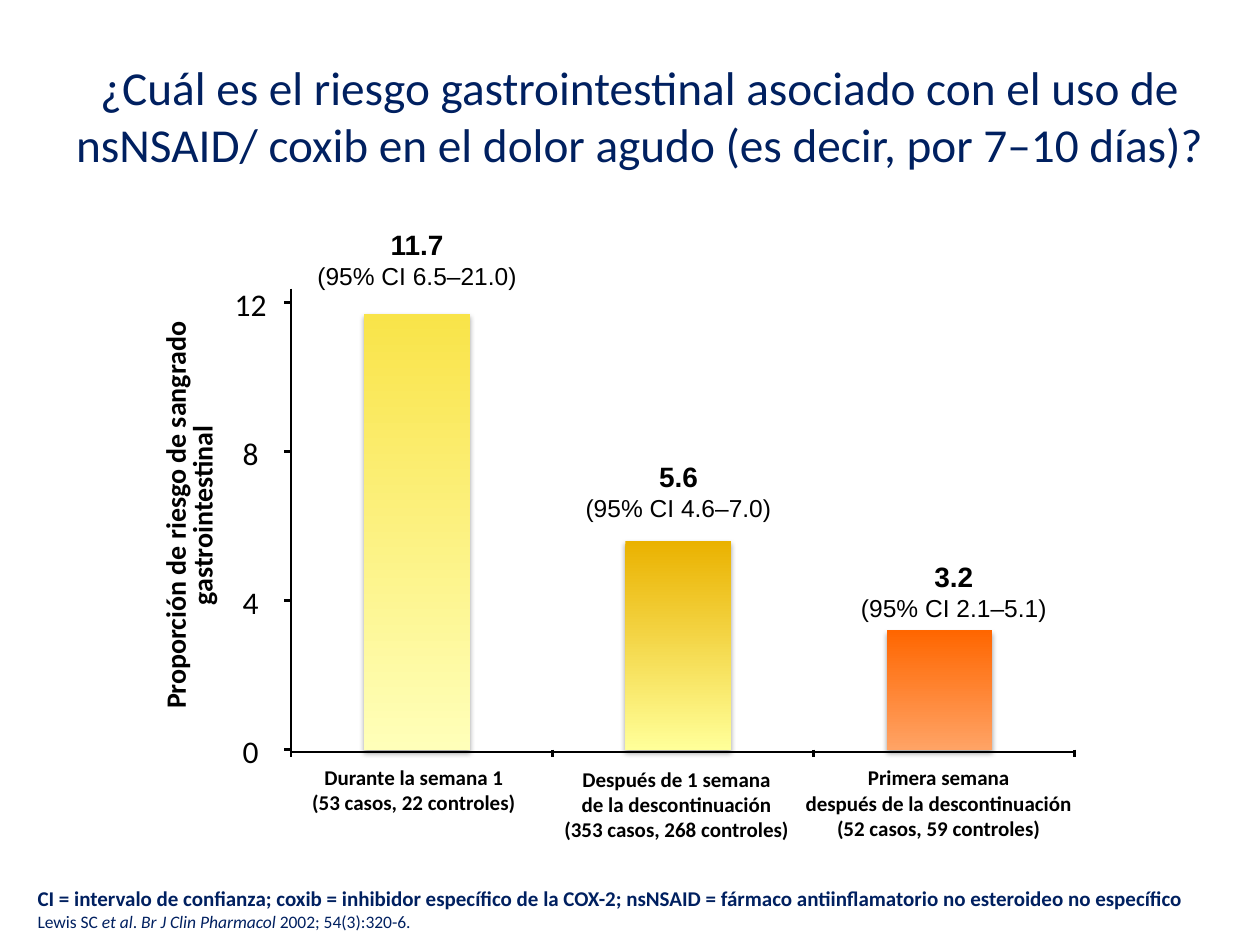
from lxml.etree import SubElement
from pptx import Presentation
from pptx.dml.color import RGBColor
from pptx.enum.shapes import MSO_CONNECTOR, MSO_SHAPE
from pptx.enum.text import MSO_ANCHOR, MSO_AUTO_SIZE, PP_ALIGN
from pptx.oxml.ns import qn
from pptx.util import Inches, Pt

BLACK = RGBColor(0, 0, 0)
NAVY = RGBColor(0x00, 0x20, 0x60)

# value, interval, top colour, bottom colour, value box, label box, label lines
BARS = [
    (11.7, "(95% CI 6.5–21.0)", RGBColor(0xF9, 0xE4, 0x49), RGBColor(0xFF, 0xFF, 0xB9),
     (1.9, 1.76, 2.82, 0.6), (2.47, 6.07, 1.63, 0.4),
     ["Durante la semana 1", "(53 casos, 22 controles)"]),
    (5.6, "(95% CI 4.6–7.0)", RGBColor(0xEA, 0xB2, 0x00), RGBColor(0xFF, 0xFF, 0x99),
     (4.2, 3.6, 2.37, 0.6), (4.45, 6.08, 1.84, 0.61),
     ["Después de 1 semana", "de la descontinuación", "(353 casos, 268 controles)"]),
    (3.2, "(95% CI 2.1–5.1)", RGBColor(0xFF, 0x66, 0x00), RGBColor(0xFF, 0xA3, 0x65),
     (6.46, 4.39, 2.22, 0.6), (6.38, 6.07, 2.14, 0.61),
     ["Primera semana", "después de la descontinuación", "(52 casos, 59 controles)"]),
]


def style(font, size, color=BLACK, bold=False, italic=False, name="Calibri"):
    font.name, font.size, font.bold, font.italic = name, Pt(size), bold, italic
    font.color.rgb = color


def add_text(slide, box, lines, size, color=BLACK, bold=False,
             align=PP_ALIGN.CENTER, tight=False):
    """Add a text box; a tight one has no margins and does not wrap."""
    shape = slide.shapes.add_textbox(*map(Inches, box))
    frame = shape.text_frame
    frame.word_wrap = not tight
    if tight:
        frame.margin_left = frame.margin_right = 0
        frame.margin_top = frame.margin_bottom = 0
    frame.auto_size = MSO_AUTO_SIZE.SHAPE_TO_FIT_TEXT
    frame.text = "\n".join(lines)
    for para in frame.paragraphs:
        para.alignment = align
        for run in para.runs:
            style(run.font, size, color, bold)
    return shape


def add_line(slide, *ends):
    line = slide.shapes.add_connector(MSO_CONNECTOR.STRAIGHT, *map(Inches, ends))
    line.line.color.rgb = BLACK
    line.line.width = Pt(1.5)
    SubElement(line._element.spPr, qn("a:effectLst"))


def add_shadow(shape):
    shape.shadow.inherit = False
    effects = shape._element.spPr.find(qn("a:effectLst"))
    outer = SubElement(effects, qn("a:outerShdw"), blurRad=str(Pt(3.1)),
                       dist=str(Pt(1.8)), dir="5400000", rotWithShape="0")
    color = SubElement(outer, qn("a:srgbClr"), val="000000")
    SubElement(color, qn("a:alpha"), val="35000")


def add_bar(slide, box, top, bottom):
    bar = slide.shapes.add_shape(MSO_SHAPE.RECTANGLE, *map(Inches, box))
    bar.line.fill.background()
    bar.fill.gradient()
    bar.fill.gradient_angle = 270
    for stop, color in zip(bar.fill.gradient_stops, (top, bottom)):
        stop.color.rgb = color
    add_shadow(bar)


def add_value(slide, box, value, interval):
    shape = add_text(slide, box, [f"{value}\v{interval}"], 16)
    head, note = shape.text_frame.paragraphs[0].runs
    style(head.font, 16, bold=True, name="Arial")
    style(note.font, 14, name="Arial")


def add_plot(slide, left, top, width, height):
    """Draw the bars and axes; the box spans the scale from 0 to 12."""
    base, unit, slot = top + height, height / 12, width / len(BARS)
    for i, (value, note, light, dark, *_) in enumerate(BARS):
        tall = value * unit
        add_bar(slide, (left + 0.58 + i * slot, base - tall, 0.84, tall), light, dark)
    for mark in range(0, 13, 4):
        y = base - mark * unit
        add_line(slide, left, y, left - 0.06, y)
        wide = 0.13 * len(str(mark))
        add_text(slide, (left - 0.32 - wide / 2, y - 0.14, wide, 0.3),
                 [str(mark)], 18, tight=True)
    for i, (value, note, _, _, place, under, lines) in enumerate(BARS):
        x = left + (i + 1) * slot
        add_line(slide, x, base, x, base + 0.06)
        add_text(slide, under, lines, 12, bold=True, tight=True)
        add_value(slide, place, value, note)
    add_line(slide, left, top - 0.11, left, base + 0.06)
    add_line(slide, left, base + 0.02, left + width, base + 0.02)


def add_axis_title(slide, *box):
    shape = add_text(slide, box, ["Proporción de riesgo de sangrado gastrointestinal"],
                     16, bold=True)
    shape.rotation = 270
    shape.text_frame.paragraphs[0].line_spacing = 0.8


def add_title(slide, *box):
    shape = add_text(slide, box, ["¿Cuál es el riesgo gastrointestinal asociado con el uso de "
                                  "nsNSAID/ coxib en el dolor agudo (es decir, por 7–10 días)?"],
                     27, NAVY)
    shape.text_frame.auto_size = MSO_AUTO_SIZE.NONE
    shape.text_frame.vertical_anchor = MSO_ANCHOR.MIDDLE


def add_notes(slide, *box):
    shape = add_text(slide, box, [
        "CI = intervalo de confianza; coxib = inhibidor específico de la COX-2; "
        "nsNSAID = fármaco antiinflamatorio no esteroideo no específico"],
        12, NAVY, True, PP_ALIGN.LEFT)
    source = shape.text_frame.add_paragraph()
    parts = ["Lewis SC ", "et al", ". ", "Br J Clin Pharmacol ", "2002; 54(3):320-6."]
    for i, part in enumerate(parts):
        run = source.add_run()
        run.text = part
        style(run.font, 10, NAVY, italic=i % 2 == 1)


def main():
    deck = Presentation()
    deck.slide_width, deck.slide_height = Inches(10), Inches(7.5)
    slide = deck.slides.add_slide(deck.slide_layouts[6])
    add_plot(slide, 2.31, 2.4, 6.22, 3.55)
    add_notes(slide, 0.2, 6.98, 9.53, 0.47)
    add_axis_title(slide, -0.66, 3.82, 4.37, 0.54)
    add_title(slide, 0.5, 0.29, 9.15, 1.25)
    deck.save("out.pptx")


if __name__ == "__main__":
    main()
